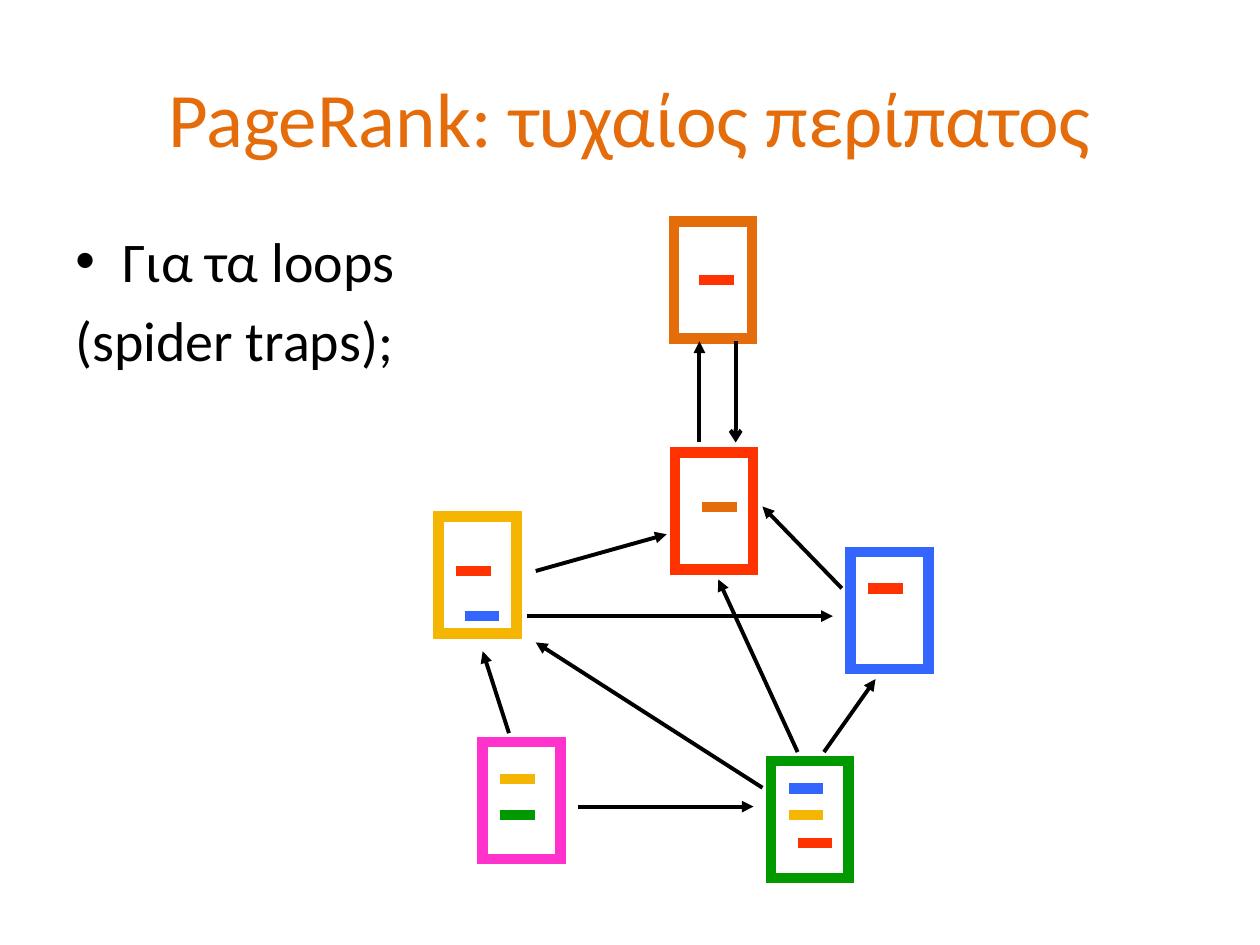
from dataclasses import dataclass

from lxml import etree
from pptx import Presentation
from pptx.dml.color import RGBColor
from pptx.enum import shapes, text
from pptx.oxml import ns
from pptx.util import Cm, Pt

FONT = "Calibri"
HEX = {
    "gold": "F5B603", "pink": "FF33CC", "green": "009900", "blue": "3366FF",
    "red": "FF3300", "orange": "E46C0A", "black": "000000", "white": "FFFFFF",
}
PAGE_W, PAGE_H = 1.57, 2.36
DASH = 0.7


@dataclass
class Link:
    """A short dash on a page, in the colour of the page it points to."""
    hue: str
    x: float
    y: float


@dataclass
class Page:
    hue: str
    x: float
    y: float
    links: tuple[Link, ...]


@dataclass
class Arrow:
    x1: float
    y1: float
    x2: float
    y2: float
    tip: str = "triangle"


PAGES = (
    Page("gold", 8.84, 10.41, (Link("red", 9.19, 11.51), Link("blue", 9.37, 12.42))),
    Page("pink", 9.73, 14.96, (Link("gold", 10.08, 15.7), Link("green", 10.08, 16.43))),
    Page("green", 15.54, 15.34, (Link("blue", 15.9, 15.89), Link("gold", 15.9, 16.43),
                                 Link("red", 16.08, 16.99))),
    Page("blue", 17.15, 11.13, (Link("red", 17.5, 11.86),)),
    Page("red", 13.61, 9.12, (Link("orange", 14.15, 10.22),)),
    Page("orange", 13.59, 4.47, (Link("red", 14.1, 5.64),)),
)
ARROWS = (
    Arrow(11.66, 16.26, 15.19, 16.26),
    Arrow(10.26, 14.78, 9.73, 13.13),
    Arrow(10.8, 11.51, 13.44, 10.77),
    Arrow(10.62, 12.42, 16.79, 12.42),
    Arrow(16.97, 11.86, 15.37, 10.21),
    Arrow(16.08, 15.16, 14.48, 11.68),
    Arrow(16.61, 15.16, 17.65, 13.69),
    Arrow(15.37, 15.88, 10.8, 12.95),
    Arrow(14.1, 8.92, 14.1, 6.88),
    Arrow(14.83, 6.88, 14.83, 8.92, "arrow"),
)


def rgb(hue: str) -> RGBColor:
    return RGBColor.from_string(HEX[hue])


def add_tag(parent, tag: str, **attrs: str) -> None:
    etree.SubElement(parent, ns.qn(tag), attrs)


def style(para, size: float, hue: str) -> None:
    for run in para.runs:
        run.font.name = FONT
        run.font.size = Pt(size)
        run.font.color.rgb = rgb(hue)


def draw_line(slide, ends: tuple[float, ...], hue: str, width: float, tip: str = "") -> None:
    line = slide.shapes.add_connector(
        shapes.MSO_CONNECTOR.STRAIGHT, *(Cm(v) for v in ends))
    line.line.color.rgb = rgb(hue)
    line.line.width = Pt(width)
    if tip:
        add_tag(line.line._get_or_add_ln(), "a:tailEnd", type=tip)
    add_tag(line._element.spPr, "a:effectLst")


def draw_page(slide, page: Page) -> None:
    box = slide.shapes.add_shape(
        shapes.MSO_SHAPE.RECTANGLE, Cm(page.x), Cm(page.y), Cm(PAGE_W), Cm(PAGE_H))
    box.shadow.inherit = False
    box.fill.solid()
    box.fill.fore_color.rgb = rgb("white")
    box.line.color.rgb = rgb(page.hue)
    box.line.width = Pt(6)
    add_tag(box.line._get_or_add_ln(), "a:miter", lim="800000")
    for link in page.links:
        draw_line(slide, (link.x, link.y, link.x + DASH, link.y), link.hue, 6)


def draw_title(slide) -> None:
    title = slide.shapes.title
    title.left, title.top, title.width, title.height = Cm(1.27), Cm(0.76), Cm(22.86), Cm(3.18)
    frame = title.text_frame
    frame.text = "PageRank: τυχαίος περίπατος"
    frame.vertical_anchor = text.MSO_ANCHOR.MIDDLE
    frame.paragraphs[0].alignment = text.PP_ALIGN.CENTER
    style(frame.paragraphs[0], 44, "orange")


def draw_body(slide) -> None:
    body = slide.shapes.add_textbox(Cm(1.27), Cm(4.45), Cm(22.86), Cm(12.57))
    frame = body.text_frame
    frame.word_wrap = True
    frame.text = "Για τα loops\n(spider traps);"
    for para in frame.paragraphs:
        para.space_before = Pt(6.4)
        style(para, 32, "black")
    props = frame.paragraphs[0]._p.get_or_add_pPr()
    props.set("marL", str(Cm(0.95)))
    props.set("indent", str(-Cm(0.95)))
    add_tag(props, "a:buFont", typeface="Arial")
    add_tag(props, "a:buChar", char="•")


def main() -> None:
    deck = Presentation()
    deck.slide_width, deck.slide_height = Cm(25.4), Cm(19.05)
    slide = deck.slides.add_slide(deck.slide_layouts[5])
    draw_title(slide)
    draw_body(slide)
    for page in PAGES:
        draw_page(slide, page)
    for arrow in ARROWS:
        draw_line(slide, (arrow.x1, arrow.y1, arrow.x2, arrow.y2), "black", 2.25, arrow.tip)
    deck.save("out.pptx")


if __name__ == "__main__":
    main()
